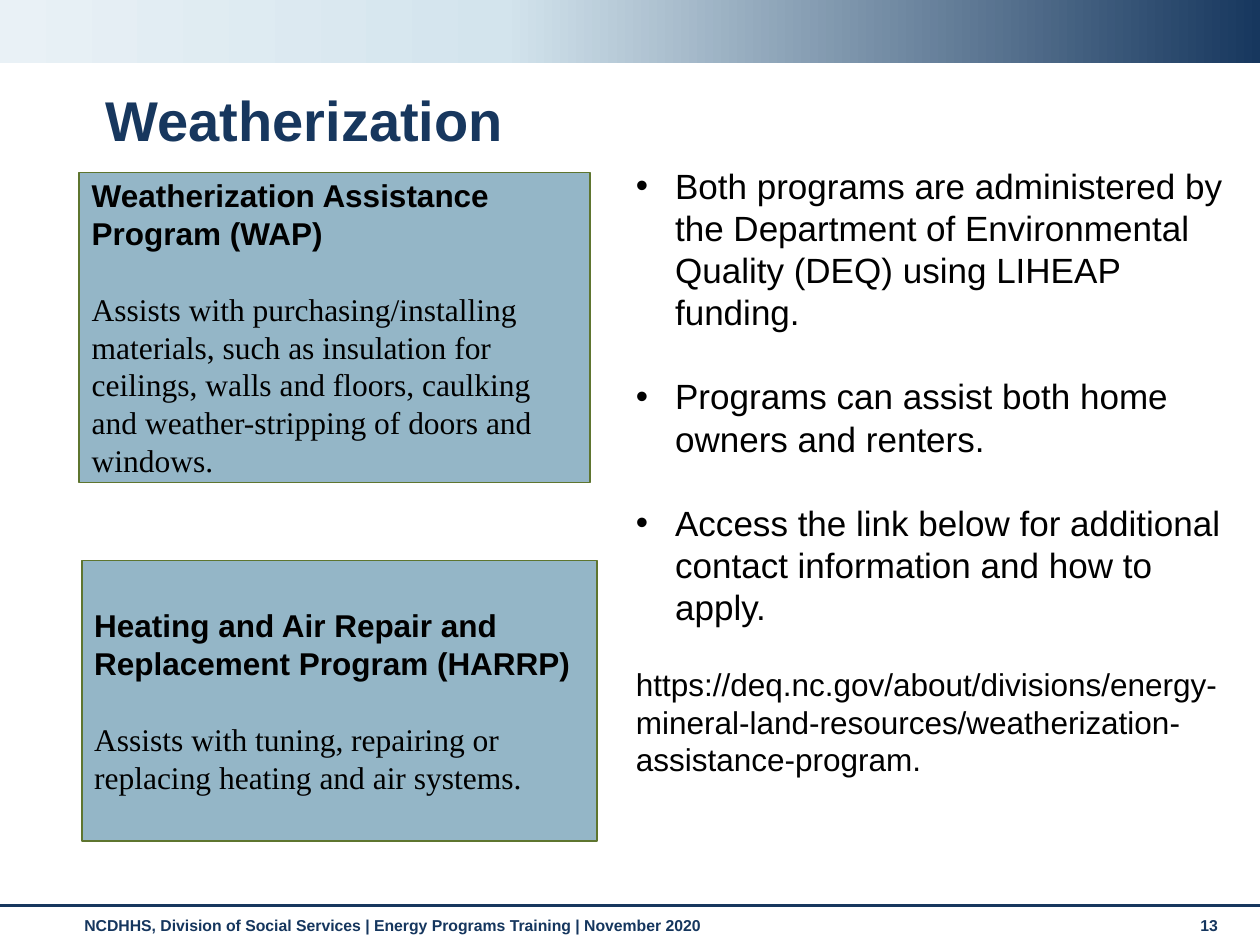
from dataclasses import dataclass

from lxml.etree import SubElement
from pptx import Presentation
from pptx.dml.color import RGBColor
from pptx.enum.shapes import MSO_CONNECTOR as Link, MSO_SHAPE as Form
from pptx.enum.text import MSO_ANCHOR as Anchor, PP_ALIGN as Align
from pptx.oxml.ns import qn
from pptx.util import Cm, Pt

NAVY, BLACK = "17375E", "000000"
WIDE = 25.4


@dataclass
class Area:
    left: float
    top: float
    width: float
    height: float

    def lengths(self) -> list:
        return [Cm(n) for n in (self.left, self.top, self.width, self.height)]


@dataclass
class Para:
    text: str
    size: float
    bold: bool = False
    face: str = "Arial"
    hue: str = BLACK
    before: float = 0
    bullet: bool = False
    pitch: float | None = None


@dataclass
class Card:
    area: Area
    head: str
    body: str


def color(code: str) -> RGBColor:
    return RGBColor.from_string(code)


def add_bullet(para) -> None:
    props = para._p.get_or_add_pPr()
    props.set("marL", str(Cm(0.79)))
    props.set("indent", str(-Cm(0.79)))
    SubElement(props, qn("a:buFont")).set("typeface", "Arial")
    SubElement(props, qn("a:buChar")).set("char", "•")


def write(shape, items: list[Para], anchor=Anchor.TOP) -> None:
    frame = shape.text_frame
    frame.word_wrap = True
    frame.vertical_anchor = anchor
    for i, item in enumerate(items):
        para = frame.paragraphs[0] if i == 0 else frame.add_paragraph()
        para.text = item.text
        para.alignment = Align.LEFT
        para.space_before = Pt(item.before)
        if item.pitch:
            para.line_spacing = item.pitch
        font = para.font
        font.name, font.size, font.bold = item.face, Pt(item.size), item.bold
        font.color.rgb = color(item.hue)
        if item.bullet:
            add_bullet(para)


def add_text(slide, area: Area, items: list[Para], anchor=Anchor.TOP) -> None:
    write(slide.shapes.add_textbox(*area.lengths()), items, anchor)


def add_rect(slide, area: Area):
    rect = slide.shapes.add_shape(Form.RECTANGLE, *area.lengths())
    rect.shadow.inherit = False
    return rect


def add_band(slide) -> None:
    """Draw the top band, fading from pale at left to navy at right."""
    band = add_rect(slide, Area(0, 0, WIDE, 1.27))
    band.line.fill.background()
    band.fill.gradient()
    band.fill.gradient_angle = 180
    stops = band._element.spPr.find(qn("a:gradFill")).find(qn("a:gsLst"))
    for stop in list(stops):
        stops.remove(stop)
    for share, code in ((0, NAVY), (60, "D3E4ED"), (100, "E9F1F6")):
        stop = SubElement(stops, qn("a:gs"), pos=str(share * 1000))
        SubElement(stop, qn("a:srgbClr"), val=code)


def add_rule(slide, top: float) -> None:
    rule = slide.shapes.add_connector(
        Link.STRAIGHT, Cm(0), Cm(top), Cm(WIDE), Cm(top))
    rule.line.color.rgb = color(NAVY)
    rule.line.width = Pt(1.75)
    SubElement(rule._element.spPr, qn("a:effectLst"))


def add_card(slide, card: Card) -> None:
    rect = add_rect(slide, card.area)
    rect.fill.solid()
    rect.fill.fore_color.rgb = color("94B6C7")
    rect.line.color.rgb = color("5E752F")
    rect.line.width = Pt(1)
    write(rect, [
        Para(card.head, 18, bold=True),
        Para(card.body, 18, face="Times New Roman", before=21.6),
    ], Anchor.MIDDLE)


FOOT = [
    (Area(1.45, 18.34, 22.2, 0.74),
     "NCDHHS, Division of Social Services | Energy Programs Training"
     " | November 2020"),
    (Area(23.95, 18.34, 1.12, 0.76), "13"),
]
POINTS = [
    "Both programs are administered by the Department of Environmental"
    " Quality (DEQ) using LIHEAP funding.",
    "Programs can assist both home owners and renters.",
    "Access the link below for additional contact information and how to"
    " apply.",
]
URL = ("https://deq.nc.gov/about/divisions/energy-mineral-land-resources/"
       "weatherization-assistance-program.")
CARDS = [
    Card(Area(1.6, 3.48, 10.29, 6.25),
         "Weatherization Assistance Program (WAP)",
         "Assists with purchasing/installing materials, such as insulation"
         " for ceilings, walls and floors, caulking and weather-stripping of"
         " doors and windows."),
    Card(Area(1.65, 11.3, 10.39, 5.66),
         "Heating and Air Repair and Replacement Program (HARRP)",
         "Assists with tuning, repairing or replacing heating and air"
         " systems."),
]


def main() -> None:
    deck = Presentation()
    deck.slide_width, deck.slide_height = Cm(WIDE), Cm(19.05)
    slide = deck.slides.add_slide(deck.slide_layouts[6])

    for area, text in FOOT:
        add_text(slide, area, [Para(text, 9, bold=True, hue="15365E")])
    add_band(slide)
    add_rule(slide, 18.26)
    add_text(slide, Area(1.88, 1.73, 21.8, 1.52),
             [Para("Weatherization", 32, bold=True, hue=NAVY, pitch=0.9)],
             Anchor.MIDDLE)
    points = [Para(text, 20, bullet=True, before=24 if i else 0)
              for i, text in enumerate(POINTS)]
    add_text(slide, Area(12.57, 3.2, 12.35, 12.75),
             points + [Para(URL, 18, before=21.6)])
    for card in CARDS:
        add_card(slide, card)

    deck.save("out.pptx")


if __name__ == "__main__":
    main()
